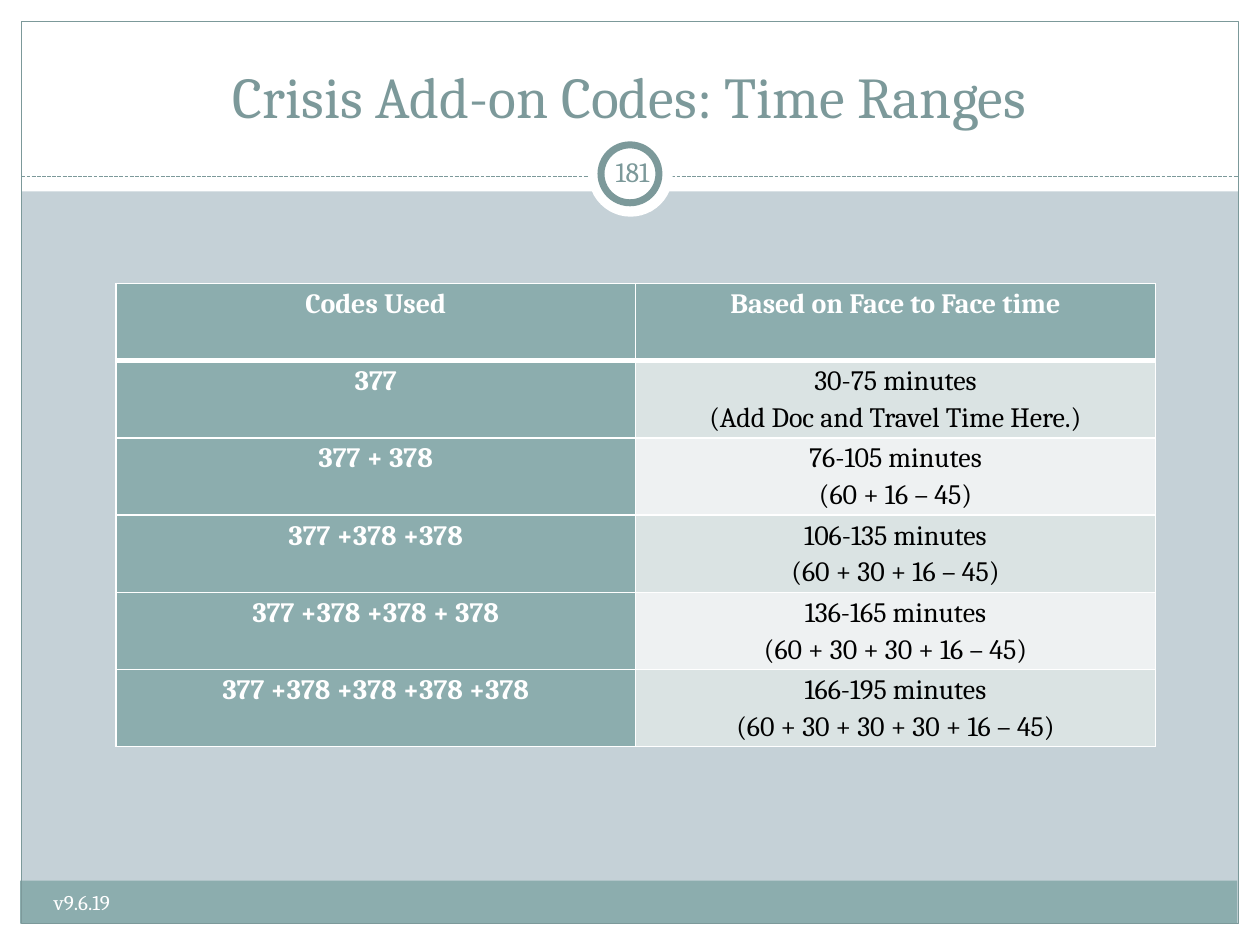
from lxml.etree import SubElement
from pptx import Presentation
from pptx.dml.color import RGBColor
from pptx.enum.dml import MSO_LINE
from pptx.enum.shapes import MSO_CONNECTOR, MSO_SHAPE
from pptx.enum.text import MSO_ANCHOR, PP_ALIGN
from pptx.oxml.ns import qn
from pptx.util import Inches, Pt

FONT = "Cambria"
WHITE, BLACK, TEAL, DARK_TEAL = "FFFFFF", "000000", "8CADAE", "7C999A"
BACKGROUND = "C5D1D7"
BANDS = ("DAE3E3", "EEF1F2")

HEADER = ("Codes Used", "Based on Face to Face time")
ROWS = [
    ("377", "30-75 minutes\n(Add Doc and Travel Time Here.)"),
    ("377 + 378", "76-105 minutes\n(60 + 16 – 45)"),
    ("377 +378 +378", "106-135 minutes\n(60 + 30 + 16 – 45)"),
    ("377 +378 +378 + 378", "136-165 minutes\n(60 + 30 + 30 + 16 – 45)"),
    ("377 +378 +378 +378 +378", "166-195 minutes\n(60 + 30 + 30 + 30 + 16 – 45)"),
]


def rgb(color):
    return RGBColor.from_string(color)


def set_attrs(obj, values):
    for name, value in values.items():
        setattr(obj, name, value)


def write(tf, text, size, color, bold=False, **paragraph_format):
    """Put each line of text in a paragraph of its own."""
    for i, line in enumerate(text.split("\n")):
        p = tf.paragraphs[0] if i == 0 else tf.add_paragraph()
        set_attrs(p, paragraph_format)
        r = p.add_run()
        r.text = line
        set_attrs(r.font, {"name": FONT, "size": Pt(size), "bold": bold})
        r.font.color.rgb = rgb(color)


def add_box(s, kind, box, fill=None, line=None, width=0.75):
    sp = s.shapes.add_shape(kind, *map(Inches, box))
    sp.shadow.inherit = False
    if fill:
        sp.fill.solid()
        sp.fill.fore_color.rgb = rgb(fill)
    else:
        sp.fill.background()
    if line:
        sp.line.color.rgb = rgb(line)
        sp.line.width = Pt(width)
    else:
        sp.line.fill.background()


def add_dashed_rule(s, left, right, y):
    cx = s.shapes.add_connector(
        MSO_CONNECTOR.STRAIGHT, Inches(left), Inches(y), Inches(right), Inches(y))
    cx.line.color.rgb = rgb(DARK_TEAL)
    set_attrs(cx.line, {"width": Pt(0.75), "dash_style": MSO_LINE.SQUARE_DOT})
    SubElement(cx._element.spPr, qn("a:effectLst"))


def add_text(s, box, text, size, color, align=PP_ALIGN.LEFT,
             anchor=MSO_ANCHOR.TOP, inset=0.1):
    tf = s.shapes.add_textbox(*map(Inches, box)).text_frame
    set_attrs(tf, {"word_wrap": True, "vertical_anchor": anchor,
                   "margin_left": Inches(inset), "margin_right": Inches(inset)})
    write(tf, text, size, color, alignment=align)


def set_borders(cell, widths):
    """Draw white borders; widths gives points for left, right, top, bottom."""
    tc_pr = cell._tc.get_or_add_tcPr()
    for i, (side, width) in enumerate(zip("LRTB", widths)):
        ln = tc_pr.makeelement(qn(f"a:ln{side}"), {"w": str(Pt(width))})
        fill = SubElement(ln, qn("a:solidFill"))
        SubElement(fill, qn("a:srgbClr"), val=WHITE)
        tc_pr.insert(i, ln)


def fill_cell(cell, text, fill, color, bold, borders):
    set_attrs(cell, {"margin_left": Inches(0.07), "margin_right": Inches(0.07),
                     "margin_top": 0, "margin_bottom": 0})
    cell.fill.solid()
    cell.fill.fore_color.rgb = rgb(fill)
    write(cell.text_frame, text, 16, color, bold,
          alignment=PP_ALIGN.CENTER, line_spacing=1.15)
    set_borders(cell, borders)


def add_code_table(s, box):
    rows = [HEADER] + ROWS
    table = s.shapes.add_table(len(rows), len(HEADER), *map(Inches, box)).table
    for i, row in enumerate(rows):
        borders = (1, 1, 3 if i == 1 else 1, 3 if i == 0 else 1)
        for j, text in enumerate(row):
            if i == 0 or j == 0:
                style = (TEAL, WHITE, True)
            else:
                style = (BANDS[(i - 1) % 2], BLACK, False)
            fill_cell(table.cell(i, j), text, *style, borders)


def add_frame(s):
    rect, oval = MSO_SHAPE.RECTANGLE, MSO_SHAPE.OVAL
    for box in ((0, 7.33, 10, 0.17), (0, 0, 10, 1.52),
                (0, 0, 0.17, 7.5), (9.83, 0, 0.17, 7.5)):
        add_box(s, rect, box, WHITE)
    add_box(s, rect, (0.16, 6.99, 9.66, 0.34), TEAL)
    add_box(s, rect, (0.17, 0.17, 9.66, 7.16), line=DARK_TEAL)
    add_dashed_rule(s, 0.17, 9.83, 1.4)
    add_box(s, oval, (4.67, 1.05, 0.67, 0.67), WHITE)
    add_box(s, oval, (4.77, 1.15, 0.46, 0.46), WHITE, DARK_TEAL, 4)


def main():
    prs = Presentation()
    set_attrs(prs, {"slide_width": Inches(10), "slide_height": Inches(7.5)})
    s = prs.slides.add_slide(prs.slide_layouts[6])
    s.background.fill.solid()
    s.background.fill.fore_color.rgb = rgb(BACKGROUND)

    add_frame(s)
    add_text(s, (0.33, 0.25, 9.33, 0.83), "Crisis Add-on Codes: Time Ranges", 33,
             DARK_TEAL, PP_ALIGN.CENTER, MSO_ANCHOR.BOTTOM)
    add_text(s, (4.77, 1.12, 0.5, 0.48), "181", 16, DARK_TEAL,
             PP_ALIGN.CENTER, MSO_ANCHOR.MIDDLE, inset=0.05)
    add_code_table(s, (0.92, 2.25, 8.25, 3.67))
    add_text(s, (0.33, 7.01, 3.92, 0.4), "v9.6.19", 12, WHITE)
    prs.save("out.pptx")


if __name__ == "__main__":
    main()
